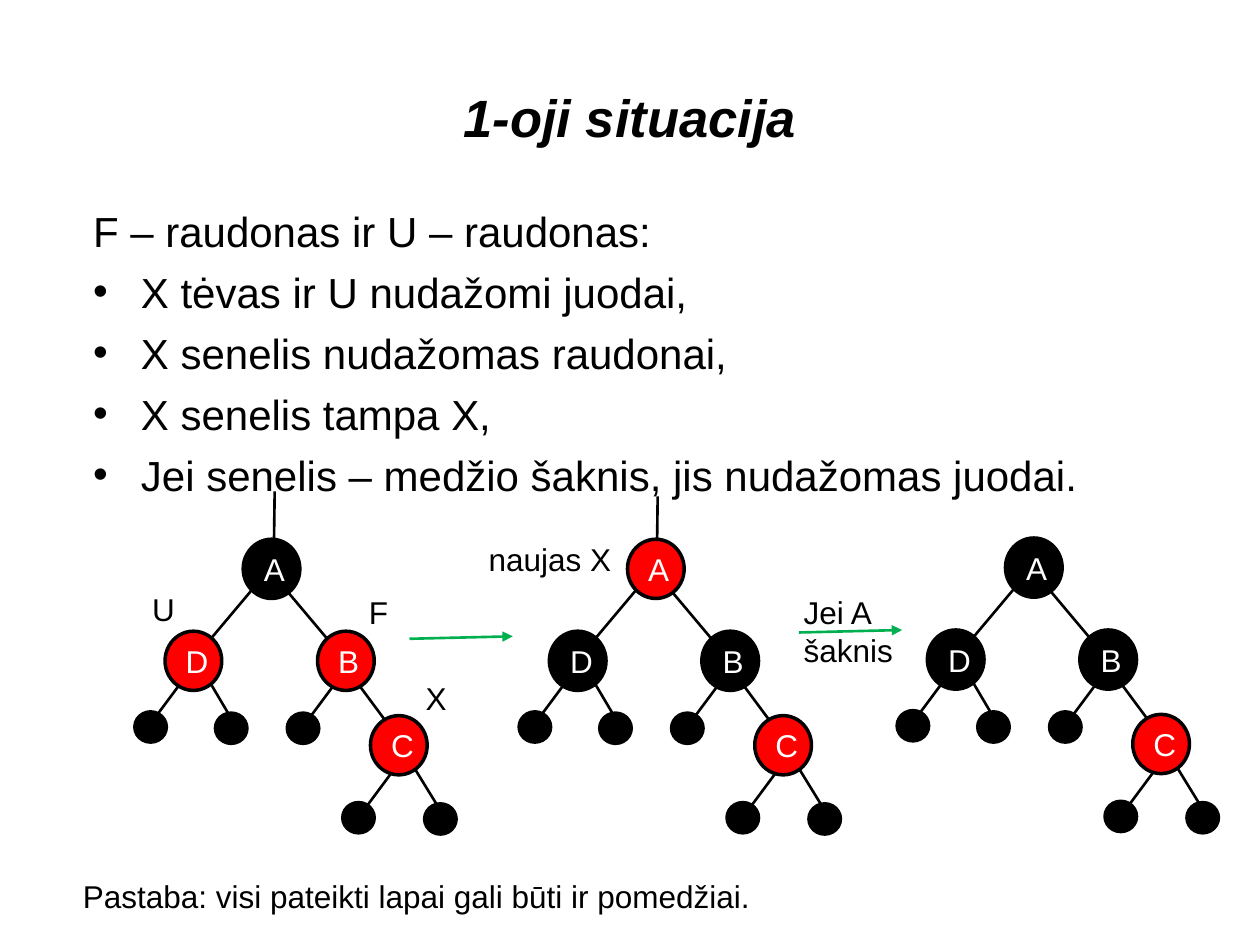
from pptx import Presentation
from pptx.dml.color import RGBColor
from pptx.enum.shapes import MSO_CONNECTOR, MSO_SHAPE
from pptx.enum.text import MSO_ANCHOR, PP_ALIGN
from pptx.util import Inches, Pt
from lxml.etree import SubElement
from pptx.oxml.ns import qn

BLACK = RGBColor(0, 0, 0)
WHITE = RGBColor(255, 255, 255)
RED = RGBColor(255, 0, 0)
GREEN = RGBColor(0, 0xB0, 0x50)

prs = Presentation()
prs.slide_width, prs.slide_height = Inches(10), Inches(7.5)
s = prs.slides.add_slide(prs.slide_layouts[5])


def add_line(x1, y1, x2, y2, color=BLACK):
    c = s.shapes.add_connector(MSO_CONNECTOR.STRAIGHT, Inches(x1), Inches(y1),
                               Inches(x2), Inches(y2))
    c.line.color.rgb = color
    c.line.width = Pt(1.5)
    SubElement(c._element.spPr, qn("a:effectLst"))
    return c


def add_circle(x, y, w, h, fill):
    sp = s.shapes.add_shape(MSO_SHAPE.OVAL, Inches(x), Inches(y), Inches(w), Inches(h))
    sp.shadow.inherit = False
    sp.fill.solid()
    sp.fill.fore_color.rgb = fill
    sp.line.color.rgb = BLACK
    sp.line.width = Pt(2)
    return sp


# Title
title = s.shapes.title
title.left, title.top, title.width, title.height = Inches(0.5), Inches(0.3), Inches(9), Inches(1.25)
tf = title.text_frame
tf.text = "1-oji situacija"
tf.vertical_anchor = MSO_ANCHOR.MIDDLE
p = tf.paragraphs[0]
p.alignment = PP_ALIGN.CENTER
f = p.runs[0].font
f.name, f.size, f.bold, f.italic = "Arial", Pt(30), True, True
f.color.rgb = BLACK

# Rules of the case
body = s.shapes.add_textbox(Inches(0.64), Inches(1.55), Inches(8.89), Inches(2.5))
tf = body.text_frame
tf.word_wrap = True
tf.margin_top = Inches(0.08)
tf.text = "\n".join([
    "F – raudonas ir U – raudonas:",
    "X tėvas ir U nudažomi juodai,",
    "X senelis nudažomas raudonai,",
    "X senelis tampa X,",
    "Jei senelis – medžio šaknis, jis nudažomas juodai.",
])
for i, p in enumerate(tf.paragraphs):
    if i > 0:
        pPr = p._p.get_or_add_pPr()
        pPr.set("marL", str(Inches(0.38)))
        pPr.set("indent", str(-Inches(0.38)))
        SubElement(pPr, qn("a:buFont")).set("typeface", "Arial")
        SubElement(pPr, qn("a:buChar")).set("char", "•")
        p.space_before = Pt(6)
    f = p.runs[0].font
    f.name, f.size = "Arial", Pt(24)
    f.color.rgb = BLACK

# Lines from the first two roots up to the rest of the tree
add_line(2.18, 3.9, 2.17, 4.65)
add_line(5.22, 3.94, 5.21, 4.69)

# Trees: positions are those of the first tree, the others are shifted
EDGES = [
    (2.44, 5.72, 2.7, 5.37), (2.88, 6.44, 3.14, 6.09), (3.5, 6.44, 3.23, 6),
    (3.2, 5.91, 2.74, 5.29), (1.22, 5.71, 1.48, 5.36), (1.84, 5.71, 1.58, 5.27),
    (2.74, 5.24, 2.16, 4.55), (1.53, 5.24, 2.11, 4.55),
]
LEAVES = [(2.28, 5.66), (3.37, 6.38), (2.72, 6.37), (1.71, 5.66), (1.07, 5.65)]
NODES = {"D": (1.31, 5.01), "A": (1.93, 4.28), "B": (2.52, 5.01), "C": (2.94, 5.68)}
TREES = [(0, 0, "DBC"), (3.05, 0, "AC"), (6.05, -0.01, "C")]  # dx, dy, red nodes

for dx, dy, red_nodes in TREES:
    for x1, y1, x2, y2 in EDGES:
        add_line(x1 + dx, y1 + dy, x2 + dx, y2 + dy)
    for x, y in LEAVES:
        add_circle(x + dx, y + dy, 0.25, 0.24, BLACK)
    for name, (x, y) in NODES.items():
        sp = add_circle(x + dx, y + dy, 0.45, 0.47, RED if name in red_nodes else BLACK)
        tf = sp.text_frame
        tf.text = name
        tf.vertical_anchor = MSO_ANCHOR.MIDDLE
        p = tf.paragraphs[0]
        p.alignment = PP_ALIGN.CENTER
        f = p.runs[0].font
        f.name, f.size = "Arial", Pt(18)
        f.color.rgb = WHITE

# Arrows between the trees
for x, y in [(6.34, 5.02), (3.25, 5.07)]:
    arrow = add_line(x, y, x + 0.82, y - 0.02, GREEN)
    SubElement(arrow.line._get_or_add_ln(), qn("a:tailEnd")).set("type", "triangle")

# Labels and note
LABELS = [
    ("X", 3.28, 5.34, 0.37, 0.4),
    ("U", 1.11, 4.63, 0.38, 0.4),
    ("naujas X", 3.78, 4.24, 1.23, 0.4),
    ("Jei A\nšaknis", 6.28, 4.66, 0.92, 0.71),
    ("Pastaba: visi pateikti lapai gali būti ir pomedžiai.", 0.56, 6.91, 5.55, 0.4),
    ("F", 2.83, 4.66, 0.37, 0.4),
]
for text, x, y, w, h in LABELS:
    tf = s.shapes.add_textbox(Inches(x), Inches(y), Inches(w), Inches(h)).text_frame
    tf.word_wrap = False
    tf.text = text
    for p in tf.paragraphs:
        f = p.runs[0].font
        f.name, f.size = "Arial", Pt(18)
        f.color.rgb = BLACK

prs.save("out.pptx")
